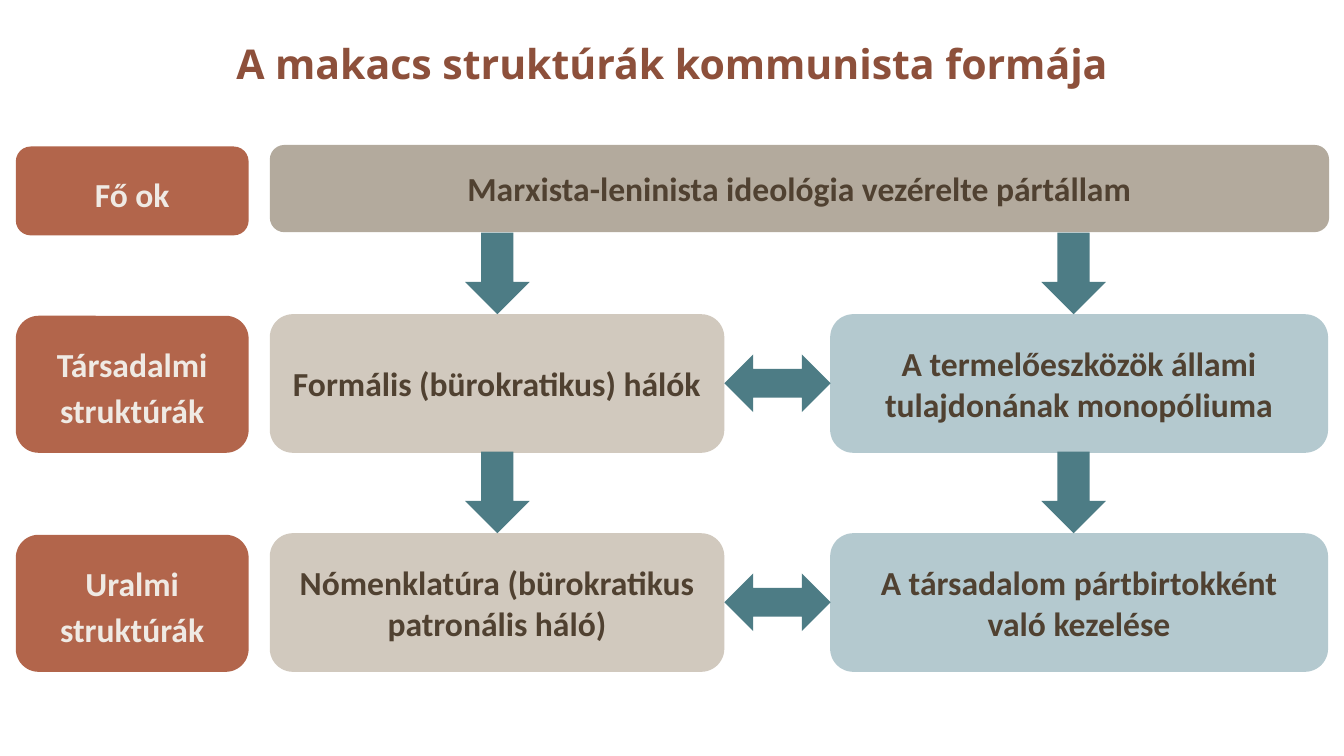
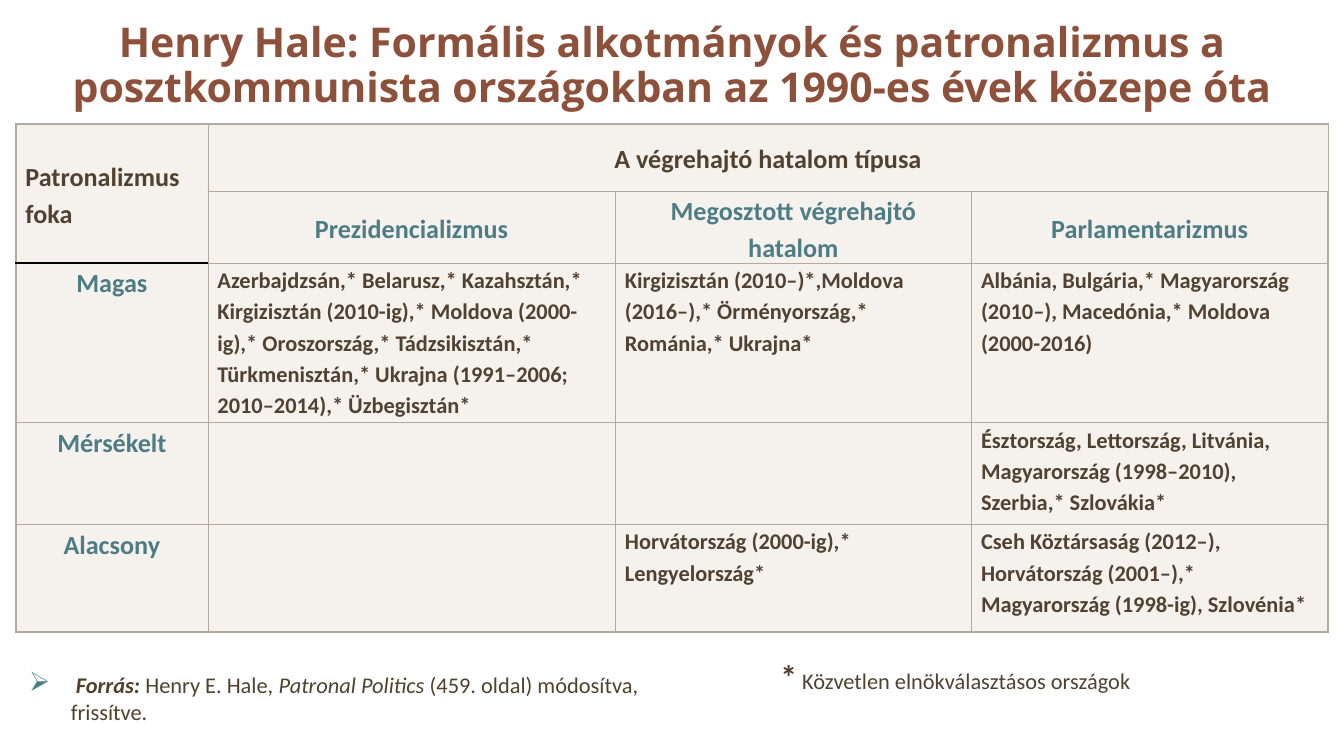
from lxml.etree import SubElement
from pptx import Presentation
from pptx.dml.color import RGBColor
from pptx.enum.shapes import MSO_SHAPE as Shape
from pptx.enum.text import MSO_ANCHOR as Anchor, PP_ALIGN as Align
from pptx.oxml import parse_xml
from pptx.oxml.ns import nsdecls, qn
from pptx.util import Cm, Pt

BROWN, RUST, TAUPE, SAND, CREAM = "504131", "B2654B", "B3AA9D", "D1C9BE", "EFEAE4"
TITLE, TEAL, BLUE, HEADING, BULLET = "8D503B", "4D7C85", "6B95A1", "4D7C84", "4D7C8B"
BLACK = "000000"


def color(value):
    return RGBColor.from_string(value)


def paint(fill, value, opacity=100):
    fill.solid()
    fill.fore_color.rgb = color(value)
    if opacity < 100:
        element = fill._xPr.find(qn("a:solidFill")).find(qn("a:srgbClr"))
        SubElement(element, qn("a:alpha"), val=str(opacity * 1000))


def write(paragraph, text, size=18, font="Calibri", ink=BROWN, bold=True, italic=False,
          align=Align.CENTER, spacing=None):
    paragraph.alignment = align
    if spacing:
        paragraph.line_spacing = spacing
    for number, line in enumerate(text.split("\n")):
        if number:
            paragraph.add_line_break()
        run = paragraph.add_run()
        run.text = line
        run.font.size = Pt(size)
        run.font.name = font
        run.font.color.rgb = color(ink)
        run.font.bold = bold
        run.font.italic = italic


def add_bullet(paragraph, symbol, indent):
    properties = paragraph._p.get_or_add_pPr()
    properties.set("marL", str(Cm(indent)))
    properties.set("indent", str(-Cm(indent)))
    shade = SubElement(properties, qn("a:buClr"))
    SubElement(shade, qn("a:srgbClr"), val=BULLET)
    SubElement(properties, qn("a:buSzPct"), val="120000")
    SubElement(properties, qn("a:buChar"), char=symbol)


def add_borders(cell, borders):
    properties = cell._tc.get_or_add_tcPr()
    for index, (side, (value, width)) in enumerate(borders.items()):
        properties.insert(index, parse_xml(
            f'<a:ln{side} {nsdecls("a")} w="{Pt(width)}"><a:solidFill>'
            f'<a:srgbClr val="{value}"/></a:solidFill></a:ln{side}>'))


class Deck:
    left, width = 0.3, 24.8

    def __init__(self):
        self.presentation = Presentation()
        self.presentation.slide_width = Cm(25.4)
        self.presentation.slide_height = Cm(14.29)
        self.slide = None

    def add_slide(self, title):
        self.slide = self.presentation.slides.add_slide(self.presentation.slide_layouts[6])
        paragraph = self.text(self.left, 0, self.width, 2.52, Anchor.MIDDLE)
        write(paragraph, title, size=22, font="Open Sans", ink=TITLE, spacing=0.9)

    def text(self, left, top, width, height, anchor=Anchor.TOP):
        shape = self.slide.shapes.add_textbox(Cm(left), Cm(top), Cm(width), Cm(height))
        frame = shape.text_frame
        frame.word_wrap = True
        frame.vertical_anchor = anchor
        return frame.paragraphs[0]

    def shape(self, kind, left, top, width, height, fill, opacity=100):
        shape = self.slide.shapes.add_shape(kind, Cm(left), Cm(top), Cm(width), Cm(height))
        shape.shadow.inherit = False
        paint(shape.fill, fill, opacity)
        shape.line.fill.background()
        return shape

    def box(self, text, left, top, width, height, fill, opacity=100, **format):
        shape = self.shape(Shape.ROUNDED_RECTANGLE, left, top, width, height, fill, opacity)
        frame = shape.text_frame
        frame.word_wrap = True
        frame.vertical_anchor = Anchor.MIDDLE
        write(frame.paragraphs[0], text, **format)
        return frame

    def label(self, text, top, height):
        frame = self.box(text, self.left, top, 4.4, height, RUST, ink=CREAM, spacing=1.15)
        frame.margin_left = frame.margin_right = Cm(0.15)
        frame.margin_top = frame.margin_bottom = Cm(0.03)

    def table(self, top, widths, heights, rows):
        last_row, last_column = len(heights) - 1, len(widths) - 1
        table = self.slide.shapes.add_table(
            len(heights), len(widths), Cm(self.left), Cm(top),
            Cm(sum(widths)), Cm(sum(heights))).table
        table.first_row = table.horz_banding = False
        for column, width in zip(table.columns, widths):
            column.width = Cm(width)
        for row, height in zip(table.rows, heights):
            row.height = Cm(height)
        table.cell(0, 0).merge(table.cell(1, 0))
        table.cell(0, 1).merge(table.cell(0, last_column))
        for r, texts in enumerate(rows):
            for c, text in enumerate(texts):
                cell = table.cell(r, c)
                cell.margin_left = cell.margin_right = Cm(0.18)
                cell.margin_top = cell.margin_bottom = 0
                cell.vertical_anchor = Anchor.MIDDLE if r < 2 else Anchor.TOP
                paint(cell.fill, CREAM, 60)
                borders = {
                    "L": (TAUPE, 1 if c == 0 else 0.5),
                    "R": (TAUPE, 1 if c == last_column else 0.5),
                    "T": (TAUPE, 1 if r == 0 else 0.5),
                    "B": (TAUPE, 1 if r == last_row else 0.5),
                }
                if c == 0 and r < 2:
                    borders["B"] = (BLACK, 1)
                elif c == 0 and r == 2:
                    borders["T"] = (BLACK, 1)
                add_borders(cell, borders)
                if not text:
                    continue
                body = r > 1 and c > 0
                corner = r == 0 and c == 0
                write(cell.text_frame.paragraphs[0], text, size=12 if body else 14,
                      ink=BROWN if body or r == 0 else HEADING,
                      align=Align.LEFT if body or corner else Align.CENTER, spacing=1.15)


def structures_slide(deck):
    deck.add_slide("A makacs struktúrák kommunista formája")
    deck.box("Marxista-leninista ideológia vezérelte pártállam", 5.1, 2.74, 20.02, 1.65, TAUPE)
    deck.label("Fő ok", 2.77, 1.68)
    step = 4.14
    rows = [
        ("Társadalmi struktúrák", "Formális (bürokratikus) hálók",
         "A termelőeszközök állami tulajdonának monopóliuma"),
        ("Uralmi struktúrák", "Nómenklatúra (bürokratikus patronális háló)",
         "A társadalom pártbirtokként való kezelése"),
    ]
    for index, (label, network, property_form) in enumerate(rows):
        offset = index * step
        deck.label(label, 5.97 + offset, 2.59)
        deck.box(network, 5.1, 5.94 + offset, 8.59, 2.62, SAND)
        deck.box(property_form, 15.69, 5.94 + offset, 9.41, 2.62, BLUE, 50)
        deck.shape(Shape.LEFT_RIGHT_ARROW, 13.69, 6.7 + offset, 2.01, 1.09, TEAL)
        for left in (8.79, 19.68):
            deck.shape(Shape.DOWN_ARROW, left, 4.4 + offset, 1.22, 1.54, TEAL)


def constitutions_slide(deck):
    deck.add_slide("Henry Hale: Formális alkotmányok és patronalizmus a "
                   "posztkommunista országokban az 1990-es évek közepe óta")
    deck.table(2.34, [3.63, 7.7, 6.73, 6.74], [1.27, 1.27, 3.02, 1.92, 2.03], [
        ["Patronalizmus foka", "A végrehajtó hatalom típusa", "", ""],
        ["", "Prezidencializmus", "Megosztott végrehajtó hatalom", "Parlamentarizmus"],
        ["Magas",
         "Azerbajdzsán,* Belarusz,* Kazahsztán,* Kirgizisztán (2010-ig),* "
         "Moldova (2000-ig),* Oroszország,* Tádzsikisztán,* Türkmenisztán,* "
         "Ukrajna (1991–2006; 2010–2014),* Üzbegisztán*",
         "Kirgizisztán (2010–)*,Moldova (2016–),* Örményország,* Románia,* Ukrajna*",
         "Albánia, Bulgária,* Magyarország (2010–), Macedónia,* Moldova (2000-2016)"],
        ["Mérsékelt", "", "",
         "Észtország, Lettország, Litvánia, Magyarország (1998–2010), "
         "Szerbia,* Szlovákia*"],
        ["Alacsony", "", "Horvátország (2000-ig),*\nLengyelország*",
         "Cseh Köztársaság (2012–), Horvátország (2001–),* "
         "Magyarország (1998-ig), Szlovénia*"],
    ])
    legend = deck.text(14.5, 12.27, 9.8, 1.02, Anchor.MIDDLE)
    write(legend, "*", align=Align.JUSTIFY)
    write(legend, " Közvetlen elnökválasztásos országok", size=12, bold=False,
          align=Align.JUSTIFY)
    source = deck.text(deck.left, 12.57, 13.41, 1.27)
    add_bullet(source, "➢", 0.79)
    for text, bold, italic in [
        (" Forrás: ", True, True),
        ("Henry E. Hale, ", False, False),
        ("Patronal Politics ", False, True),
        ("(459. oldal) módosítva, frissítve.", False, False),
    ]:
        write(source, text, size=12, ink="50412B", bold=bold, italic=italic, align=Align.LEFT)


def main():
    deck = Deck()
    structures_slide(deck)
    constitutions_slide(deck)
    deck.presentation.save("out.pptx")


if __name__ == "__main__":
    main()
